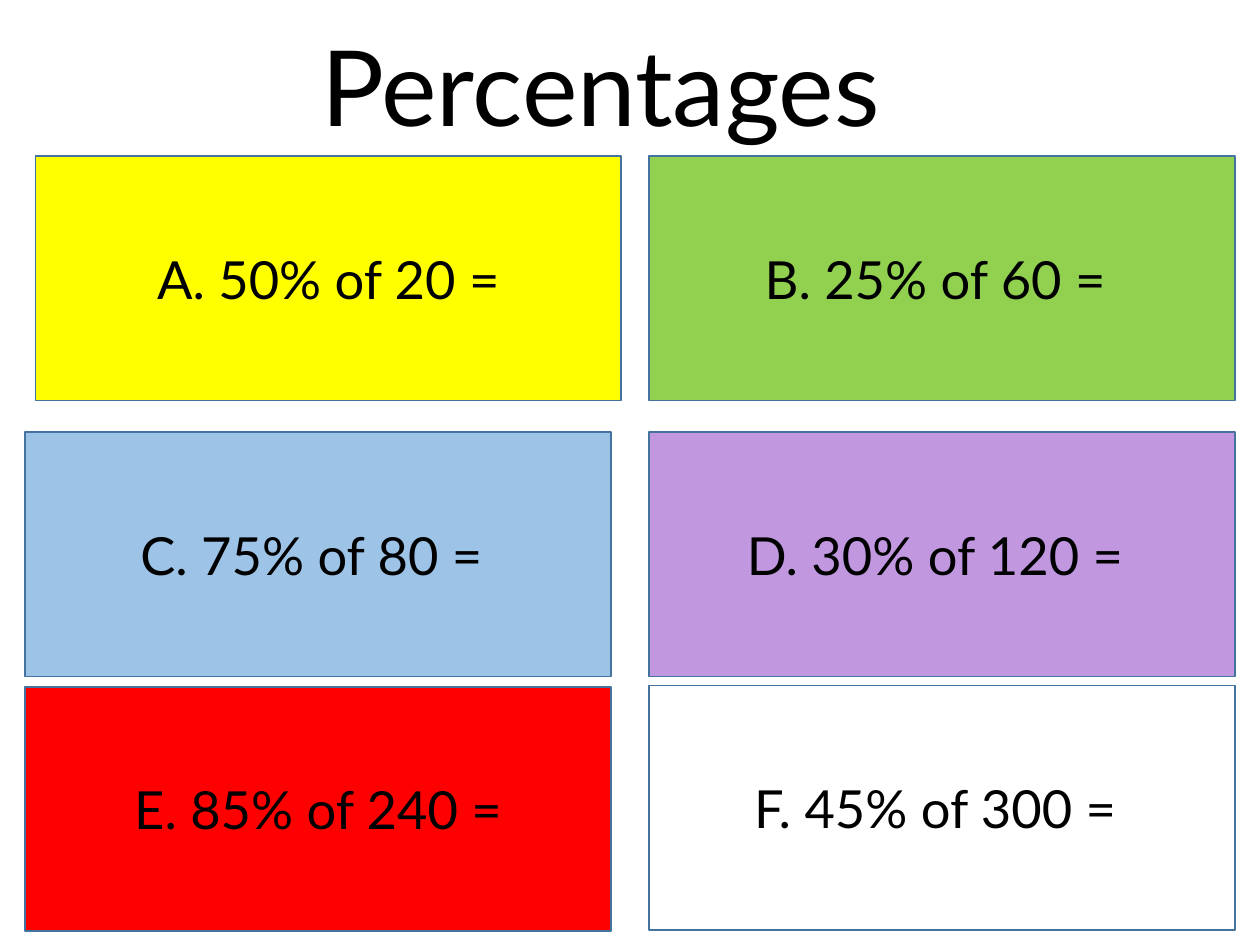
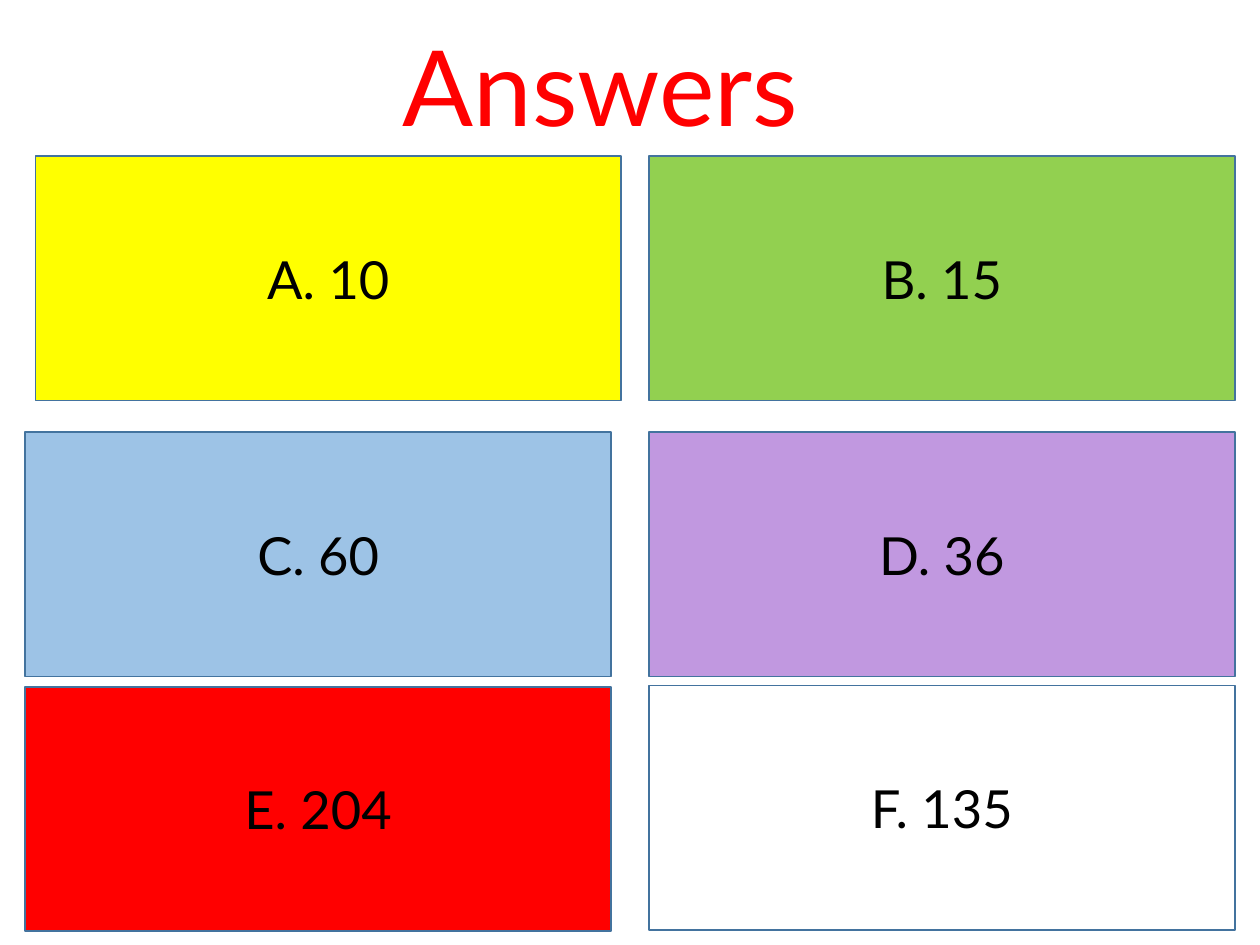
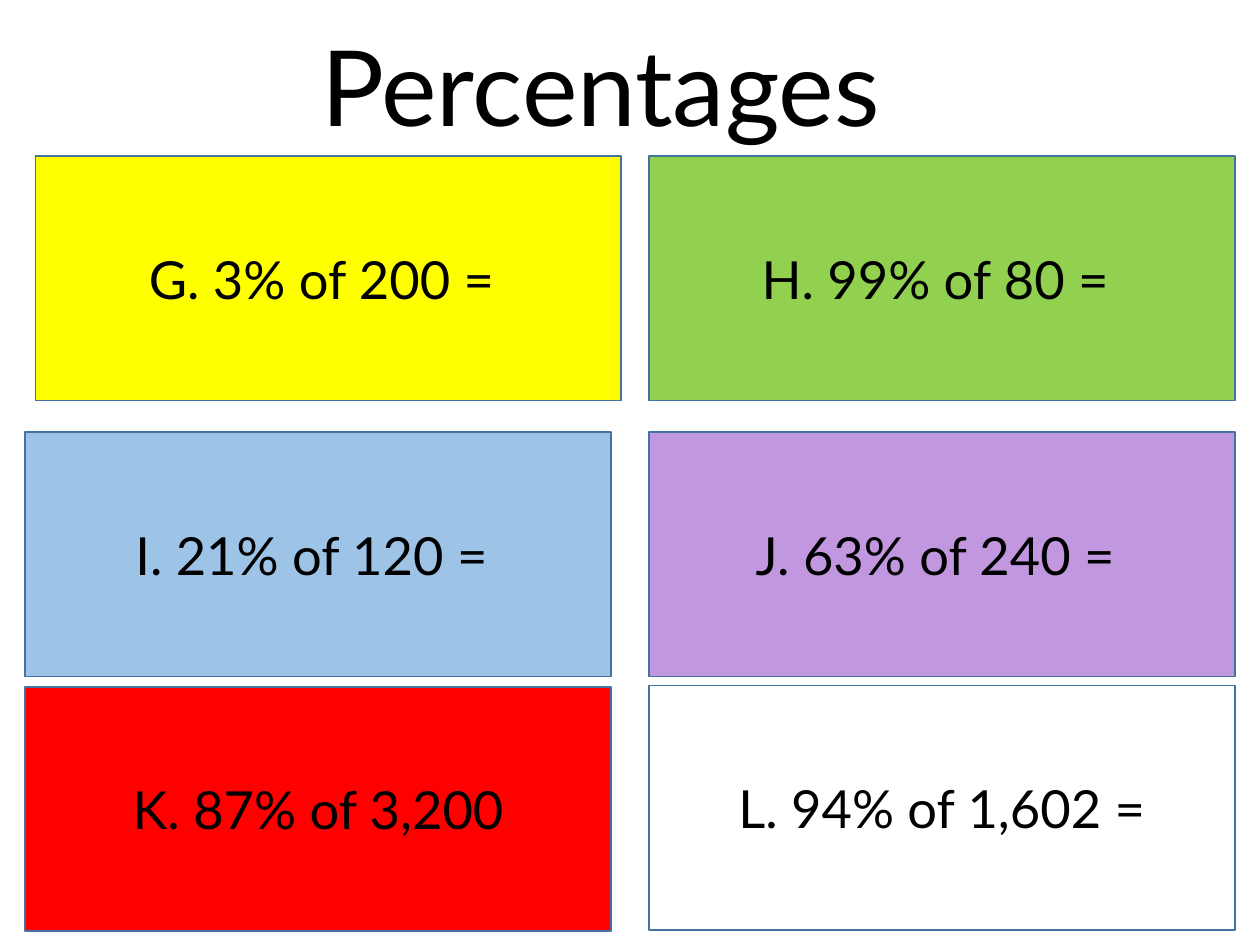
from dataclasses import dataclass
from typing import Optional

from pptx import Presentation
from pptx import util as u
from pptx.dml.color import RGBColor
from pptx.enum import shapes, text
from pptx.slide import Slide
from pptx.text.text import TextFrame

Pt = u.Pt


@dataclass(frozen=True)
class Theme:
    font: str = "Lato"
    title_size: int = 60
    card_size: int = 30
    ink: str = "000000"
    answer: str = "FF0000"
    outline: str = "43739E"
    outline_width: float = 1


@dataclass(frozen=True)
class Card:
    left: float
    top: float
    fill: Optional[str]


@dataclass(frozen=True)
class Quiz:
    title: str
    title_color: str
    entries: tuple[str, ...]


THEME = Theme()

# Card grid: the right column is aligned, the left one steps slightly
CARD_WIDTH, CARD_HEIGHT = 334.8, 139.7
RIGHT = 370.8
CARDS = (
    Card(20.2, 89.3, "FFFF00"), Card(RIGHT, 89.3, "92D050"),
    Card(14.4, 247, "9DC3E6"), Card(RIGHT, 247, "C198E0"),
    Card(14.4, 392.4, "FF0000"), Card(RIGHT, 391.7, None),
)

# Trailing spaces belong to the wording and shift the centred line
QUIZZES = (
    Quiz("Percentages", THEME.ink, (
        "A. 50% of 20 =", "B. 25% of 60 = ", "C. 75% of 80 = ",
        "D. 30% of 120 = ", "E. 85% of 240 =", "F. 45% of 300 = ")),
    Quiz("Answers", THEME.answer, (
        "A. 10", "B. 15", "C. 60", "D. 36", "E. 204", "F. 135")),
    Quiz("Percentages", THEME.ink, (
        "G. 3% of 200 = ", "H. 99% of 80 = ", "I. 21% of 120 = ",
        "J. 63% of 240 = ", "K. 87% of 3,200", "L. 94% of 1,602 =")),
)


def write(frame: TextFrame, wording: str, size: float, color: str) -> None:
    frame.word_wrap = True
    frame.text = wording
    line = frame.paragraphs[0]
    line.alignment = text.PP_ALIGN.CENTER
    font = line.runs[0].font
    font.name, font.size = THEME.font, Pt(size)
    font.color.rgb = RGBColor.from_string(color)


def draw_title(slide: Slide, quiz: Quiz) -> None:
    title = slide.shapes.add_textbox(Pt(92.9), Pt(8.6), Pt(500.4), Pt(79.9))
    write(title.text_frame, quiz.title, THEME.title_size, quiz.title_color)
    title.text_frame.auto_size = text.MSO_AUTO_SIZE.SHAPE_TO_FIT_TEXT


def draw_card(slide: Slide, card: Card, entry: str) -> None:
    box = slide.shapes.add_shape(
        shapes.MSO_SHAPE.RECTANGLE, Pt(card.left), Pt(card.top),
        Pt(CARD_WIDTH), Pt(CARD_HEIGHT))
    box.shadow.inherit = False
    if card.fill:
        box.fill.solid()
        box.fill.fore_color.rgb = RGBColor.from_string(card.fill)
    else:
        box.fill.background()
    box.line.color.rgb = RGBColor.from_string(THEME.outline)
    box.line.width = Pt(THEME.outline_width)
    box.text_frame.vertical_anchor = text.MSO_ANCHOR.MIDDLE
    write(box.text_frame, entry, THEME.card_size, THEME.ink)


def main() -> None:
    deck = Presentation()
    deck.slide_width, deck.slide_height = Pt(720), Pt(540)
    blank = deck.slide_layouts[6]
    for quiz in QUIZZES:
        slide = deck.slides.add_slide(blank)
        draw_title(slide, quiz)
        for card, entry in zip(CARDS, quiz.entries):
            draw_card(slide, card, entry)
    deck.save("out.pptx")


if __name__ == "__main__":
    main()
